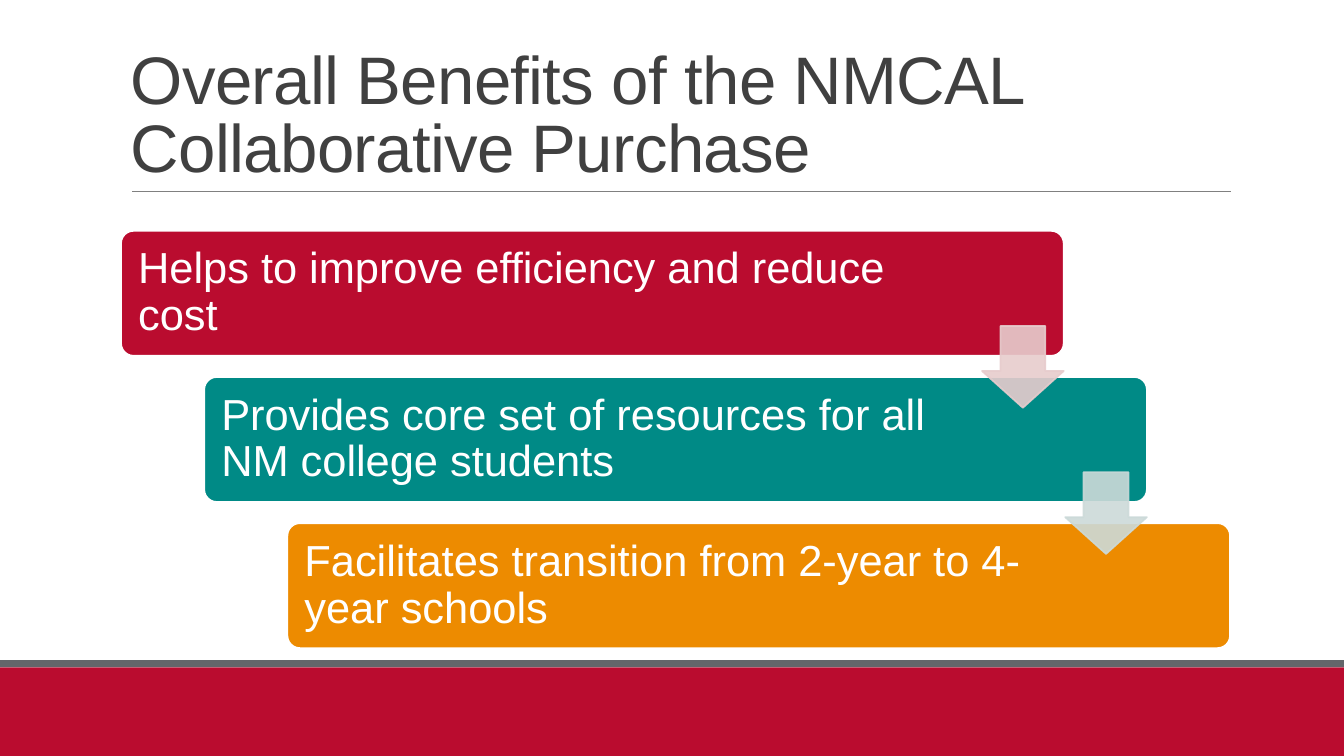
from lxml.etree import SubElement
from pptx import Presentation
from pptx.dml.color import RGBColor
from pptx.enum.shapes import MSO_CONNECTOR as Connector, MSO_SHAPE as Shape
from pptx.enum.text import MSO_ANCHOR as Anchor
from pptx.oxml.ns import qn
from pptx.util import Inches, Pt

WIDTH, HEIGHT = 13.33, 7.5
FONT = "Arial"
COLORS = {
    "red": "BA0C2F", "teal": "008A86", "orange": "ED8B00", "slate": "63666A",
    "rule": "808080", "title": "404040", "white": "FFFFFF",
    "pale_red": "E7CCCD", "pale_teal": "CCDAD9",
}
BENEFITS = [
    ("Helps to improve efficiency and reduce cost", "red", "pale_red", 8.01),
    ("Provides core set of resources for all NM college students", "teal", "pale_teal", 7.64),
    ("Facilitates transition from 2-year to 4-year schools", "orange", None, 7.64),
]


def rgb(color):
    return RGBColor.from_string(COLORS[color])


def add_filled(slide, kind, box, color, outline=None):
    shape = slide.shapes.add_shape(kind, *map(Inches, box))
    shape.shadow.inherit = False
    shape.fill.solid()
    shape.fill.fore_color.rgb = rgb(color)
    if outline:
        shape.line.color.rgb = rgb(outline)
        shape.line.width = Pt(1.25)
    else:
        shape.line.fill.background()
    return shape


def add_text(slide, box, text, size, color, anchor, spacing, insets):
    frame = slide.shapes.add_textbox(*map(Inches, box)).text_frame
    frame.word_wrap = True
    frame.vertical_anchor = anchor
    side, edge = map(Inches, insets)
    frame.margin_left = frame.margin_right = side
    frame.margin_top = frame.margin_bottom = edge
    paragraph = frame.paragraphs[0]
    paragraph.text = text
    paragraph.line_spacing = spacing
    paragraph.font.name = FONT
    paragraph.font.size = Pt(size)
    paragraph.font.color.rgb = rgb(color)
    return paragraph


def add_footer(slide, left, top, width, height):
    stripe = 0.07
    add_filled(slide, Shape.RECTANGLE, (left, top + stripe, width, height - stripe), "red")
    add_filled(slide, Shape.RECTANGLE, (left, top, width, stripe), "slate")


def add_heading(slide, left, top, width, height):
    bottom = top + height
    rule = slide.shapes.add_connector(
        Connector.STRAIGHT,
        *map(Inches, (left + 0.11, bottom, left + width + 0.01, bottom)))
    rule.line.color.rgb = rgb("rule")
    rule.line.width = Pt(0.5)
    SubElement(rule._element.spPr, qn("a:effectLst"))
    heading = add_text(
        slide, (left, top, width, height),
        "Overall Benefits of the NMCAL Collaborative Purchase",
        48, "title", Anchor.BOTTOM, 0.85, (0.1, 0.05))
    heading.runs[0]._r.get_or_add_rPr().set("spc", "-50")


def add_arrow(slide, left, top, size, color):
    arrow = add_filled(slide, Shape.DOWN_ARROW, (left, top, size, size), color, color)
    arrow.adjustments[0] = 0.55
    arrow.adjustments[1] = 0.45
    for paint in arrow._element.spPr.iter(qn("a:srgbClr")):
        SubElement(paint, qn("a:alpha")).set("val", "90000")


def add_staircase(slide, left, top, width, height):
    step_x, step_y = 0.825, 1.45
    bar_width = width - step_x * (len(BENEFITS) - 1)
    bar_height = height - step_y * (len(BENEFITS) - 1)
    inset, arrow_size = 0.04, 0.81
    for row, (benefit, color, _, text_width) in enumerate(BENEFITS):
        x, y = left + row * step_x, top + row * step_y
        bar = add_filled(slide, Shape.ROUNDED_RECTANGLE,
                         (x, y, bar_width, bar_height), color, "white")
        bar.adjustments[0] = 0.1
        add_text(slide, (x + inset, y + inset, text_width, bar_height - 2 * inset),
                 benefit, 31, "white", Anchor.MIDDLE, 0.9, (0.13, 0.13))
    for row, (_, _, arrow_color, _) in enumerate(BENEFITS[:-1]):
        add_arrow(slide, left + row * step_x + bar_width - arrow_size,
                  top + row * step_y + 0.945, arrow_size, arrow_color)


def main():
    deck = Presentation()
    deck.slide_width, deck.slide_height = Inches(WIDTH), Inches(HEIGHT)
    slide = deck.slides.add_slide(deck.slide_layouts[6])
    add_footer(slide, 0, 6.55, WIDTH, HEIGHT - 6.55)
    add_heading(slide, 1.2, 0.31, 11, 1.59)
    add_staircase(slide, 1.2, 2.29, 11, 4.14)
    deck.save("out.pptx")


if __name__ == "__main__":
    main()
